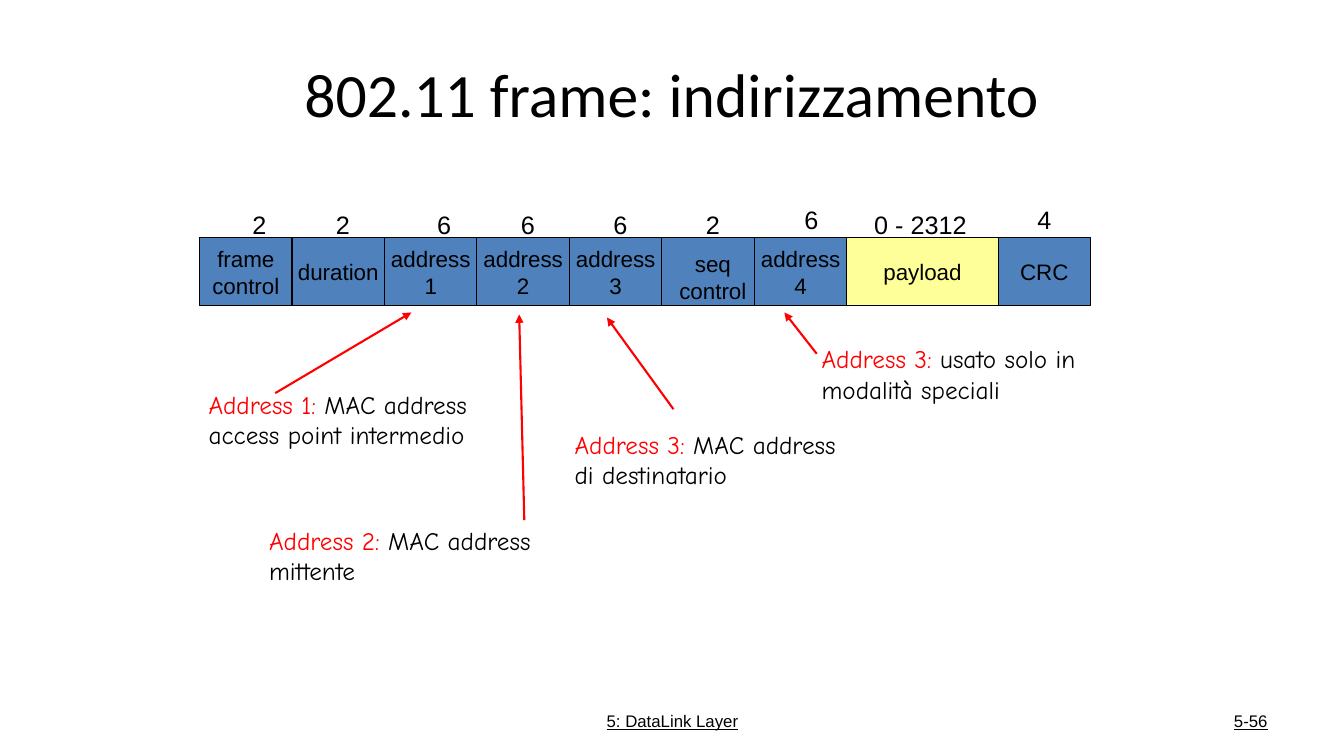
import pptx
import pptx.util
import pptx.dml.color
import pptx.enum.shapes
import pptx.enum.text
import pptx.oxml.ns
from lxml import etree

RGBColor = pptx.dml.color.RGBColor
BLACK = RGBColor(0x00, 0x00, 0x00)
RED = RGBColor(0xFF, 0x00, 0x00)
BLUE = RGBColor(0x4F, 0x81, 0xBD)
YELLOW = RGBColor(0xFF, 0xFF, 0x99)
ALIGN = pptx.enum.text.PP_ALIGN
ANCHOR = pptx.enum.text.MSO_ANCHOR

# Content; all lengths are percentages of the slide's width or height
TITLE = "802.11 frame: indirizzamento"
FOOTERS = [  # text, left, width, alignment
    ("5: DataLink Layer", 34.21, 31.66, ALIGN.CENTER),
    ("5-56", 71.72, 23.33, ALIGN.RIGHT),
]
FRAME_LEFT, FRAME_TOP, FRAME_HEIGHT = 14.85, 31.47, 8.93
FIELD, PAYLOAD = 6.88, 11.25
LOW, HIGH = 27.07, 26.4
SEQ = "seq\ncontrol"
FIELDS = [  # name, bytes, width, fill, shift of the byte count, its top
    ("frame\ncontrol", "2", FIELD, BLUE, 1, LOW),
    ("duration", "2", FIELD, BLUE, 0.35, LOW),
    ("address\n1", "6", FIELD, BLUE, 1, LOW),
    ("address\n2", "6", FIELD, BLUE, 0.35, LOW),
    ("address\n3", "6", FIELD, BLUE, 0.35, LOW),
    (SEQ, "2", FIELD, BLUE, 0.35, LOW),
    ("address\n4", "6", FIELD, BLUE, 0.8, HIGH),
    ("payload", "0 - 2312", PAYLOAD, YELLOW, -0.15, LOW),
    ("CRC", "4", FIELD, BLUE, 0, HIGH),
]
NOTES = [  # label, explanation, (left, top, width), arrow from, arrow to
    ("Address 1:", " MAC address\naccess point intermedio",
     (14.78, 50.8, 23.03), (20.48, 52), (30.61, 41.33)),
    ("Address 2:", " MAC address\nmittente",
     (19.28, 68.8, 23.33), (39.01, 68.8), (38.63, 41.6)),
    ("Address 3:", " MAC address\ndi destinatario",
     (42.01, 56.13, 25.06), (50.11, 54.13), (45.16, 42)),
    ("Address 3:", " usato solo in modalità speciali",
     (60.39, 44.8, 21.38), (60.77, 46.8), (58.36, 41.33)),
]

prs = pptx.Presentation()
prs.slide_width = pptx.util.Inches(13.33)
prs.slide_height = pptx.util.Inches(7.5)
s = prs.slides.add_slide(prs.slide_layouts[5])


def x(share):
    return int(prs.slide_width * share / 100)


def y(share):
    return int(prs.slide_height * share / 100)


def box(left, top, width, height):
    return x(left), y(top), x(width), y(height)


def write(sp, text, label="", font="Arial", size=16, align=ALIGN.CENTER,
          anchor=ANCHOR.MIDDLE, wrap=False, underline=None):
    """Fill a shape with an optional red label followed by black text."""
    tf = sp.text_frame
    tf.word_wrap = wrap
    tf.vertical_anchor = anchor
    for i, line in enumerate(text.split("\n")):
        p = tf.paragraphs[0] if i == 0 else tf.add_paragraph()
        p.alignment = align
        runs = [(line, BLACK)]
        if label and i == 0:
            runs.insert(0, (label, RED))
        for words, color in runs:
            r = p.add_run()
            r.text = words
            r.font.name = font
            r.font.size = pptx.util.Pt(size)
            r.font.color.rgb = color
            r.font.underline = underline


def add_arrow(start, end):
    sp = s.shapes.add_connector(pptx.enum.shapes.MSO_CONNECTOR.STRAIGHT,
                                x(start[0]), y(start[1]), x(end[0]), y(end[1]))
    sp.line.color.rgb = RED
    sp.line.width = pptx.util.Pt(1.5)
    qn = pptx.oxml.ns.qn
    etree.SubElement(sp.line._get_or_add_ln(), qn("a:tailEnd"), type="triangle")
    etree.SubElement(sp._element.spPr, qn("a:effectLst"))


# Title and footer
title = s.shapes.title
title.left, title.top, title.width, title.height = box(5, 4, 90, 16.67)
write(title, TITLE, font="Calibri", size=44, wrap=True)
for text, left, width, align in FOOTERS:
    sp = s.shapes.add_textbox(*box(left, 92.67, width, 5.33))
    write(sp, text, size=12, align=align, wrap=True, underline=True)

# Frame fields with their byte counts
frame = s.shapes.add_group_shape().shapes
left = FRAME_LEFT
for name, count, width, fill, shift, top in FIELDS:
    sp = frame.add_shape(pptx.enum.shapes.MSO_SHAPE.RECTANGLE,
                         *box(left, FRAME_TOP, width, FRAME_HEIGHT))
    sp.shadow.inherit = False
    sp.fill.solid()
    sp.fill.fore_color.rgb = fill
    sp.line.color.rgb = BLACK
    sp.line.width = pptx.util.Pt(0.75)
    if name == SEQ:  # this name sits a little lower, in its own box
        sp = frame.add_textbox(*box(left + 0.35, FRAME_TOP + 0.7,
                                    width, FRAME_HEIGHT))
    write(sp, name)
    sp = frame.add_textbox(*box(left + shift, top, width, 5.33))
    write(sp, count, size=18, anchor=ANCHOR.TOP)
    left += width

# Explanations and arrows
for label, text, (left, top, width), start, end in NOTES:
    sp = s.shapes.add_textbox(*box(left, top, width, 9.33))
    write(sp, text, label=label, font="Comic Neue", size=18,
          align=ALIGN.LEFT, anchor=ANCHOR.TOP, wrap=True)
    add_arrow(start, end)

prs.save("out.pptx")
